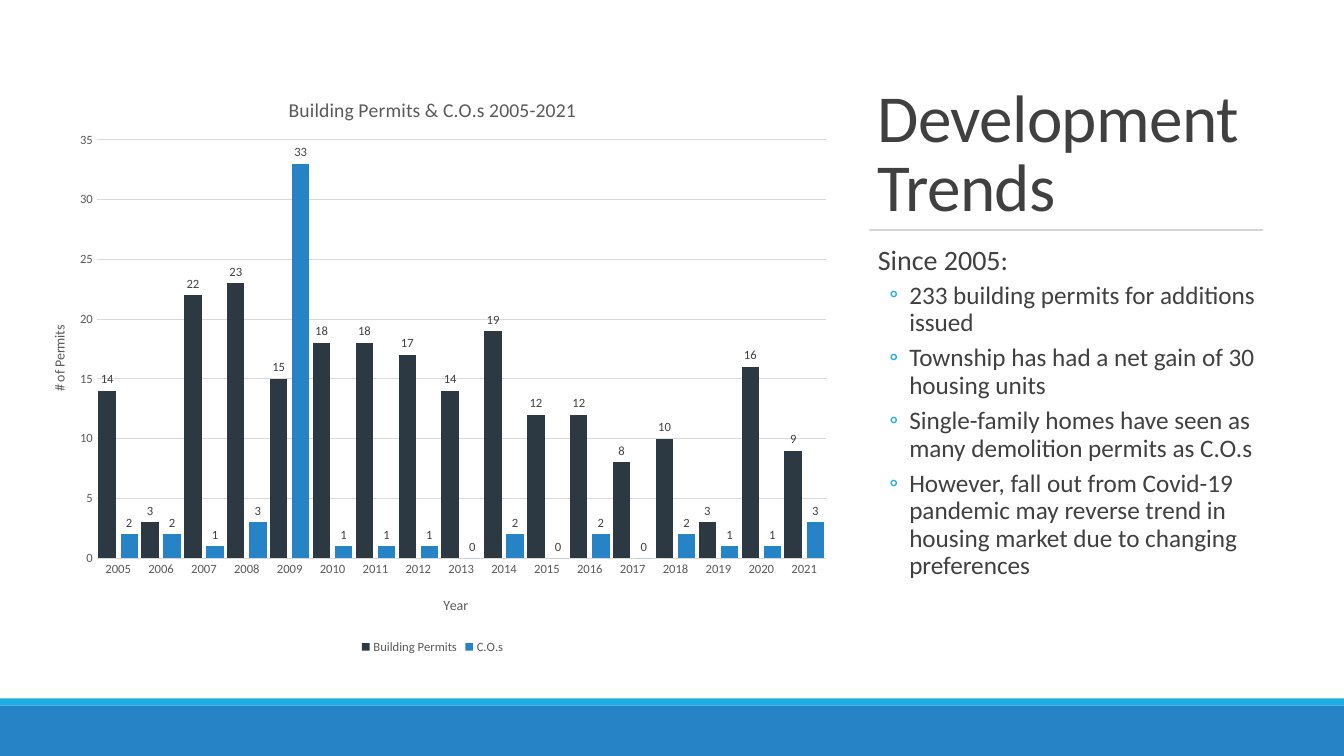
from lxml import etree
from pptx import Presentation
from pptx.chart.data import CategoryChartData
from pptx.dml.color import RGBColor
from pptx.enum.chart import XL_CHART_TYPE, XL_LABEL_POSITION, XL_LEGEND_POSITION, XL_TICK_MARK
from pptx.enum.shapes import MSO_CONNECTOR, MSO_SHAPE
from pptx.enum.text import MSO_ANCHOR
from pptx.oxml.ns import qn
from pptx.util import Pt

PX = 9525
FONT = "Calibri"
COLORS = {
    "text": "404040", "muted": "595959", "grid": "D9D9D9", "rule": "808080",
    "dark": "2C3943", "blue": "2683C6", "cyan": "1CADE4",
}
COLUMN = XL_CHART_TYPE.COLUMN_CLUSTERED
OUTSIDE_END = XL_LABEL_POSITION.OUTSIDE_END
LEGEND_BOTTOM = XL_LEGEND_POSITION.BOTTOM
NO_TICK = XL_TICK_MARK.NONE
RECTANGLE = MSO_SHAPE.RECTANGLE
STRAIGHT = MSO_CONNECTOR.STRAIGHT
TOP, BOTTOM = MSO_ANCHOR.TOP, MSO_ANCHOR.BOTTOM

YEARS = [str(year) for year in range(2005, 2022)]
SERIES = [
    ("Building Permits", "dark", [14, 3, 22, 23, 15, 18, 18, 17, 14, 19, 12, 12, 8, 10, 3, 16, 9]),
    ("C.O.s", "blue", [2, 2, 1, 3, 33, 1, 1, 1, 0, 2, 0, 2, 0, 2, 1, 1, 3]),
]
TRENDS = [
    "233 building permits for additions issued",
    "Township has had a net gain of 30 housing units",
    "Single-family homes have seen as many demolition permits as C.O.s",
    "However, fall out from Covid-19 pandemic may reverse trend in "
    "housing market due to changing preferences",
]


def px(*values):
    return [value * PX for value in values]


def rgb(name):
    return RGBColor.from_string(COLORS[name])


def set_font(font, size, color):
    font.name = FONT
    font.size = Pt(size)
    font.bold = False
    font.color.rgb = rgb(color)


def add_rect(s, box, color):
    sp = s.shapes.add_shape(RECTANGLE, *px(*box))
    sp.shadow.inherit = False
    sp.fill.solid()
    sp.fill.fore_color.rgb = rgb(color)
    sp.line.fill.background()


def add_rule(s, x1, x2, y):
    line = s.shapes.add_connector(STRAIGHT, *px(x1, y, x2, y))
    line.line.color.rgb = rgb("rule")
    line.line.width = Pt(0.5)
    color = line._element.spPr.find(".//" + qn("a:srgbClr"))
    etree.SubElement(color, qn("a:alpha"), val="90000")
    etree.SubElement(line._element.spPr, qn("a:effectLst"))


def add_frame(s, box, anchor=TOP, inset=0):
    tf = s.shapes.add_textbox(*px(*box)).text_frame
    tf.word_wrap = True
    tf.vertical_anchor = anchor
    tf.margin_left = tf.margin_right = inset * PX
    return tf


def write(tf, text, size, color="text", spacing=None, before=0, after=0,
          left=0, hanging=0, bullet=None, tracking=None):
    p = tf.paragraphs[0]
    if p.runs:
        p = tf.add_paragraph()
    r = p.add_run()
    r.text = text
    set_font(r.font, size, color)
    if spacing:
        p.line_spacing = spacing
    p.space_before, p.space_after = Pt(before), Pt(after)
    pPr = p._p.get_or_add_pPr()
    pPr.set("marL", str(left * PX))
    pPr.set("indent", str(-hanging * PX))
    if bullet:
        bullet_color = etree.SubElement(pPr, qn("a:buClr"))
        etree.SubElement(bullet_color, qn("a:srgbClr"), val=COLORS["cyan"])
        etree.SubElement(pPr, qn("a:buFont"), typeface=FONT)
        etree.SubElement(pPr, qn("a:buChar"), char=bullet)
    if tracking:
        r._r.get_or_add_rPr().set("spc", str(tracking))


def set_layout(element, index, **fractions):
    for old in element.findall(qn("c:layout")):
        element.remove(old)
    layout = etree.Element(qn("c:layout"))
    manual = etree.SubElement(layout, qn("c:manualLayout"))
    if "w" in fractions:
        etree.SubElement(manual, qn("c:layoutTarget"), val="inner")
    for axis in "xy":
        etree.SubElement(manual, qn(f"c:{axis}Mode"), val="edge")
    for key, value in fractions.items():
        etree.SubElement(manual, qn(f"c:{key}"), val=str(value))
    element.insert(index, layout)


def set_title(title, text, size, x, y):
    write(title.text_frame, text, size, "muted")
    set_layout(title._element, 1, x=x, y=y)


def style_axis(axis, title, x, y):
    axis.major_tick_mark = axis.minor_tick_mark = NO_TICK
    set_font(axis.tick_labels.font, 9, "muted")
    set_title(axis.axis_title, title, 10, x, y)


def style_line(line):
    line.color.rgb = rgb("grid")
    line.width = Pt(0.75)


def add_permit_chart(s, box):
    data = CategoryChartData()
    data.categories = YEARS
    for name, _, values in SERIES:
        data.add_series(name, values)
    chart = s.shapes.add_chart(COLUMN, *px(*box), data).chart
    set_font(chart.font, 10, "muted")
    set_title(chart.chart_title, "Building Permits & C.O.s 2005-2021", 14, 0.32, 0.04)

    years, permits = chart.category_axis, chart.value_axis
    style_axis(years, "Year", 0.51, 0.89)
    style_line(years.format.line)
    style_axis(permits, "# of Permits", 0.03, 0.43)
    permits.format.line.fill.background()
    permits.minimum_scale, permits.maximum_scale, permits.major_unit = 0, 35, 5
    style_line(permits.major_gridlines.format.line)

    chart.has_legend = True
    chart.legend.position = LEGEND_BOTTOM
    chart.legend.include_in_layout = False
    set_font(chart.legend.font, 9, "muted")

    plot = chart.plots[0]
    plot.gap_width, plot.overlap = 20, -27
    plot.vary_by_categories = False
    for series, (_, color, _) in zip(plot.series, SERIES):
        series.format.fill.solid()
        series.format.fill.fore_color.rgb = rgb(color)
        labels = series.data_labels
        labels.show_value = True
        labels.position = OUTSIDE_END
        set_font(labels.font, 9, "text")
    plot_area = chart._chartSpace.find(".//" + qn("c:plotArea"))
    set_layout(plot_area, 0, x=0.09, y=0.12, w=0.89, h=0.71)


def main():
    prs = Presentation()
    prs.slide_width, prs.slide_height = px(1280, 720)
    s = prs.slides.add_slide(prs.slide_layouts[6])

    title = add_frame(s, (826, 66, 388, 153), anchor=BOTTOM, inset=10)
    write(title, "Development Trends", 48, spacing=0.85, tracking=-50)
    add_rule(s, 828, 1203, 219)

    body = add_frame(s, (826, 230, 388, 385))
    write(body, "Since 2005:", 20, spacing=0.9, before=12, after=2, left=10)
    for trend in TRENDS:
        write(body, trend, 18, spacing=0.9, before=2, after=4,
              left=40, hanging=19, bullet="◦")

    add_rect(s, (0, 665, 1280, 7), "cyan")
    add_rect(s, (0, 672, 1280, 48), "blue")
    add_permit_chart(s, (22, 66, 780, 561))
    prs.save("out.pptx")


if __name__ == "__main__":
    main()
